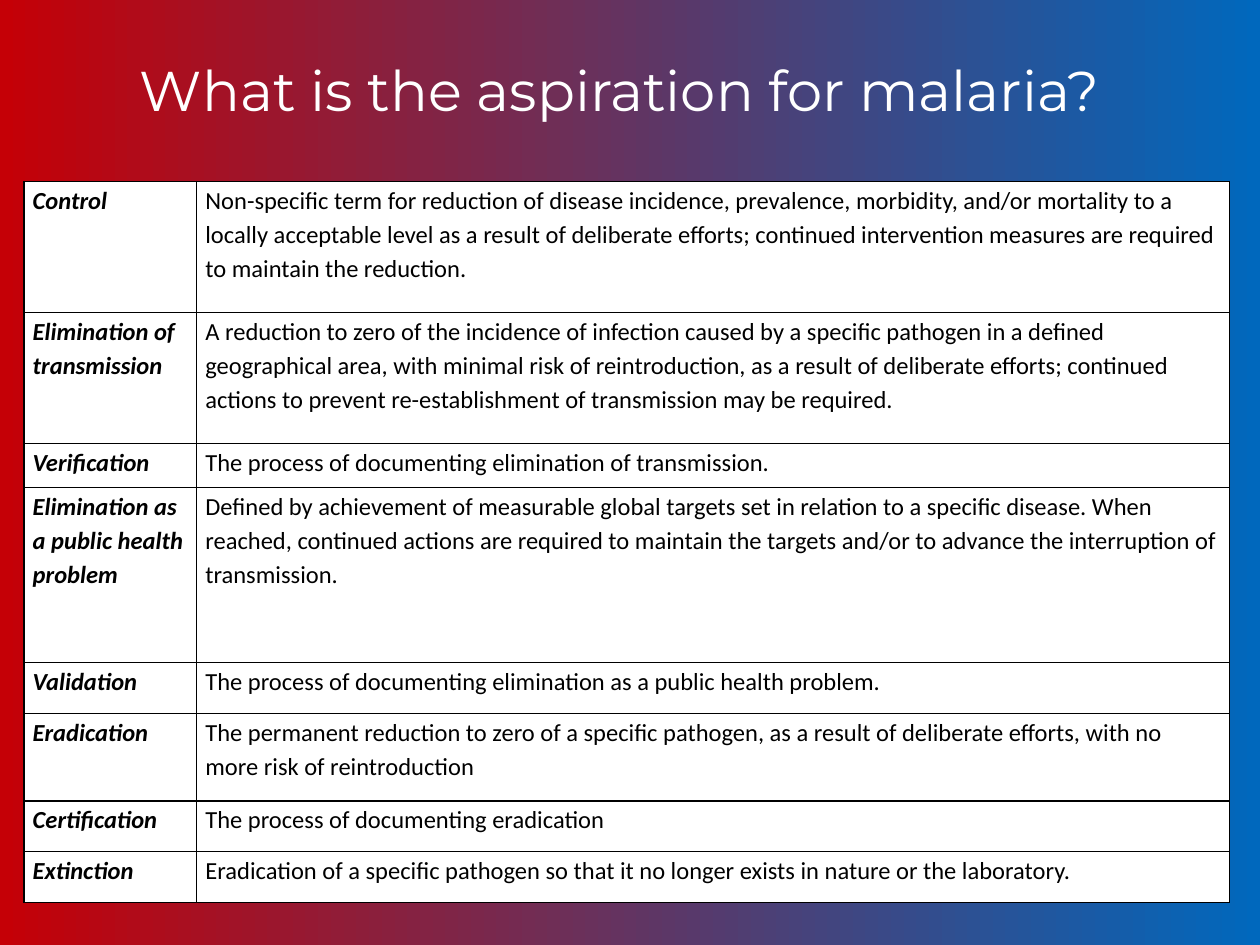
from dataclasses import dataclass

from lxml.etree import SubElement
from pptx import Presentation
from pptx.dml.color import RGBColor
from pptx.enum.text import MSO_ANCHOR, PP_ALIGN
from pptx.oxml.ns import qn
from pptx.util import Cm, Pt

RED = RGBColor(0xC5, 0x00, 0x06)
BLUE = RGBColor(0x00, 0x68, 0xBD)
WHITE = RGBColor(0xFF, 0xFF, 0xFF)
BLACK = RGBColor(0x00, 0x00, 0x00)

TITLE_BOX = {"left": Cm(1.07), "top": Cm(0.2), "width": Cm(22.86), "height": Cm(3.18)}
TITLE_FONT = {"name": "Montserrat", "size": Pt(32)}
CELL_FONT = {"name": "Calibri", "size": Pt(14)}
TERM_FONT = {**CELL_FONT, "bold": True, "italic": True}
MEANING_FONT = {**CELL_FONT, "bold": False, "italic": False}
CELL_MARGINS = {"margin_left": Cm(0.18), "margin_right": Cm(0.18),
                "margin_top": Cm(0), "margin_bottom": Cm(0)}
CELL_SPACING = {"line_spacing": 1.15, "space_after": Pt(10)}
COL_WIDTHS = (Cm(3.48), Cm(20.83))


@dataclass
class Definition:
    term: str
    meaning: str
    height: float


DEFINITIONS = [
    Definition("Control",
               "Non-specific term for reduction of disease incidence, prevalence, morbidity, "
               "and/or mortality to a locally acceptable level as a result of deliberate "
               "efforts; continued intervention measures are required to maintain the "
               "reduction.", 2.64),
    Definition("Elimination of transmission",
               "A reduction to zero of the incidence of infection caused by a specific "
               "pathogen in a defined geographical area, with minimal risk of reintroduction, "
               "as a result of deliberate efforts; continued actions to prevent "
               "re-establishment of transmission may be required.", 2.64),
    Definition("Verification",
               "The process of documenting elimination of transmission.", 0.89),
    Definition("Elimination as a public health problem",
               "Defined by achievement of measurable global targets set in relation to a "
               "specific disease. When reached, continued actions are required to maintain "
               "the targets and/or to advance the interruption of transmission.", 3.53),
    Definition("Validation",
               "The process of documenting elimination as a public health problem.", 1.02),
    Definition("Eradication",
               "The permanent reduction to zero of a specific pathogen, as a result of "
               "deliberate efforts, with no more risk of reintroduction", 1.77),
    Definition("Certification", "The process of documenting eradication", 1.02),
    Definition("Extinction",
               "Eradication of a specific pathogen so that it no longer exists in nature or "
               "the laboratory.", 1.02),
]


def set_format(target, values: dict) -> None:
    for name, value in values.items():
        setattr(target, name, value)


def add_run(p, text: str, font: dict, color: RGBColor) -> None:
    r = p.add_run()
    r.text = text
    set_format(r.font, font)
    r.font.color.rgb = color


def draw_background(s) -> None:
    fill = s.background.fill
    fill.gradient()
    fill.gradient_angle = 0
    for stop, color, position in zip(fill.gradient_stops, (RED, BLUE), (0, 1)):
        stop.color.rgb = color
        stop.position = position


def draw_title(s, text: str) -> None:
    sp = s.shapes.title
    set_format(sp, TITLE_BOX)
    tf = sp.text_frame
    set_format(tf, {"vertical_anchor": MSO_ANCHOR.MIDDLE, "word_wrap": True})
    p = tf.paragraphs[0]
    p.alignment = PP_ALIGN.CENTER
    add_run(p, text, TITLE_FONT, WHITE)


def add_borders(cell) -> None:
    tc_pr = cell._tc.get_or_add_tcPr()
    for side in ("lnL", "lnR", "lnT", "lnB"):
        ln = SubElement(tc_pr, qn(f"a:{side}"), w=str(Pt(1)))
        fill = SubElement(ln, qn("a:solidFill"))
        SubElement(fill, qn("a:srgbClr"), val=str(BLACK))


def draw_cell(cell, text: str, font: dict) -> None:
    set_format(cell, CELL_MARGINS)
    add_borders(cell)
    cell.fill.solid()
    cell.fill.fore_color.rgb = WHITE
    p = cell.text_frame.paragraphs[0]
    set_format(p, CELL_SPACING)
    add_run(p, text, font, BLACK)


def draw_table(s, definitions: list[Definition]) -> None:
    height = Cm(sum(d.height for d in definitions))
    table = s.shapes.add_table(len(definitions), len(COL_WIDTHS), Cm(0.48), Cm(3.66),
                               sum(COL_WIDTHS), height).table
    set_format(table, {"first_row": False, "horz_banding": False})
    for column, width in zip(table.columns, COL_WIDTHS):
        column.width = width
    for row, d in zip(table.rows, definitions):
        row.height = Cm(d.height)
        draw_cell(row.cells[0], d.term, TERM_FONT)
        draw_cell(row.cells[1], d.meaning, MEANING_FONT)


def main() -> None:
    prs = Presentation()
    set_format(prs, {"slide_width": Cm(25.4), "slide_height": Cm(19.05)})
    s = prs.slides.add_slide(prs.slide_layouts[5])
    draw_background(s)
    draw_title(s, "What is the aspiration for malaria?")
    draw_table(s, DEFINITIONS)
    prs.save("out.pptx")


if __name__ == "__main__":
    main()
